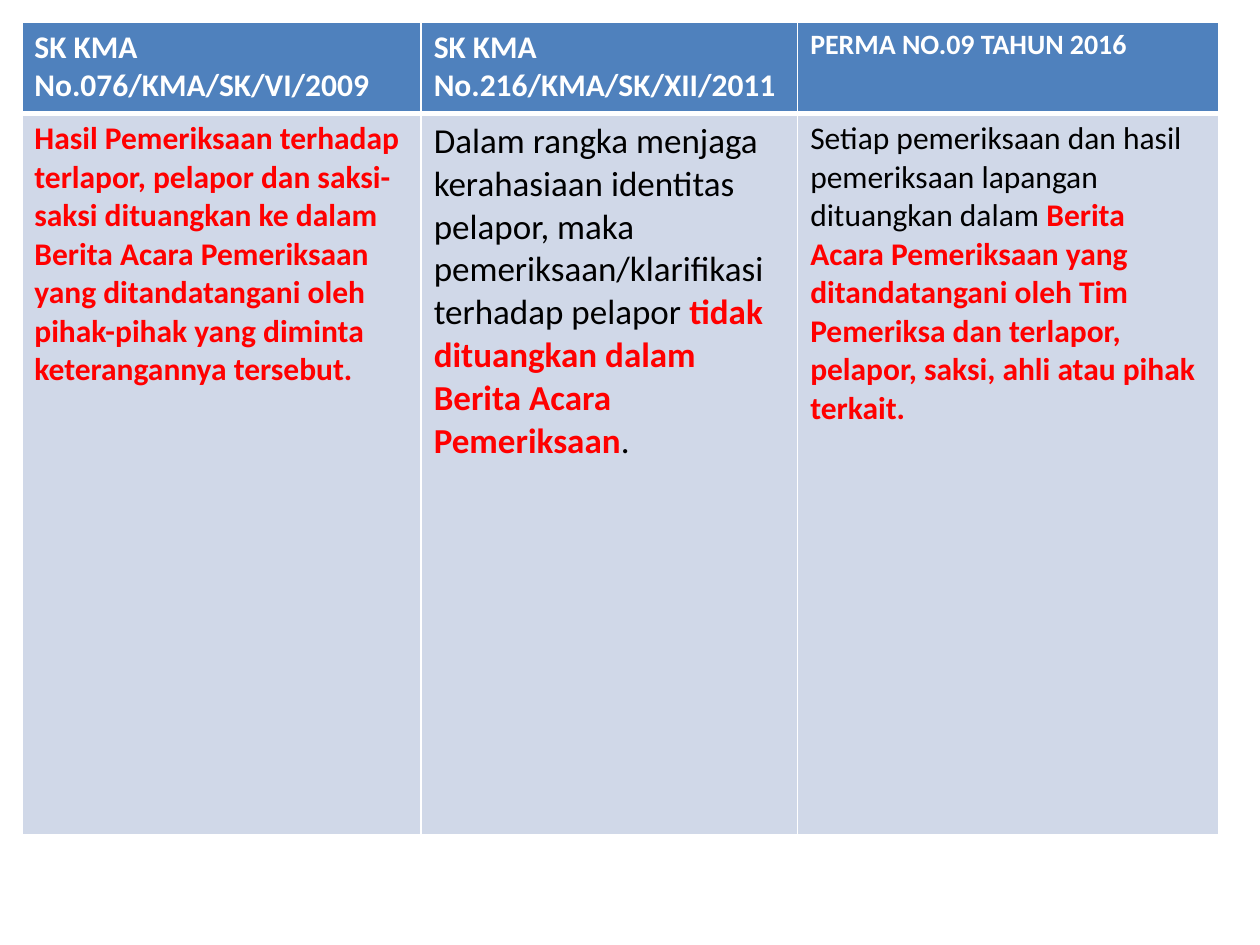
from dataclasses import dataclass

from lxml import etree
from pptx import Presentation
from pptx.dml.color import RGBColor as Rgb
from pptx.oxml import ns
from pptx.util import Cm, Pt


@dataclass(frozen=True)
class Theme:
    font: str = "Calibri"
    head: str = "4F81BD"
    body: str = "D0D8E8"
    white: str = "FFFFFF"
    black: str = "000000"
    red: str = "FF0000"
    small: int = 16
    mid: int = 18
    large: int = 20
    thin: int = 1
    thick: int = 3


theme = Theme()


def rule(cell, side, width):
    """Draw a white border on one side (L, R, T or B) of a cell."""
    props = cell._tc.get_or_add_tcPr()
    line = etree.SubElement(props, ns.qn(f"a:ln{side}"), w=str(Pt(width)))
    fill = etree.SubElement(line, ns.qn("a:solidFill"))
    etree.SubElement(fill, ns.qn("a:srgbClr"), val=theme.white)


def write(cell, size, parts):
    """Fill a cell with one paragraph of (wording, colour, bold) runs."""
    para = cell.text_frame.paragraphs[0]
    para.font.name = theme.font
    para.font.size = Pt(size)
    for words, color, bold in parts:
        run = para.add_run()
        run.text = words
        run.font.size = Pt(size)
        run.font.bold = bold
        run.font.color.rgb = Rgb.from_string(color)


heads = [
    (theme.mid, [("SK KMA No.076/KMA/SK/VI/2009", theme.white, True)]),
    (theme.mid, [("SK KMA No.216/KMA/SK/XII/2011", theme.white, True)]),
    (theme.small, [("PERMA NO.09 TAHUN 2016", theme.white, True)]),
]
bodies = [
    (theme.mid, [
        ("Hasil Pemeriksaan terhadap terlapor, pelapor dan saksi-saksi "
         "dituangkan ke dalam Berita Acara Pemeriksaan yang ditandatangani "
         "oleh pihak-pihak yang diminta keterangannya tersebut.",
         theme.red, True),
    ]),
    (theme.large, [
        ("Dalam rangka menjaga kerahasiaan identitas pelapor, maka "
         "pemeriksaan/klarifikasi terhadap pelapor ", theme.black, False),
        ("tidak dituangkan dalam Berita Acara Pemeriksaan", theme.red, True),
        (".", theme.black, False),
    ]),
    (theme.mid, [
        ("Setiap pemeriksaan dan hasil pemeriksaan lapangan dituangkan "
         "dalam ", theme.black, False),
        ("Berita Acara Pemeriksaan yang ditandatangani oleh Tim Pemeriksa "
         "dan terlapor, pelapor, saksi, ahli atau pihak terkait.",
         theme.red, True),
    ]),
]
rows = [
    (1.85, theme.head, theme.thin, theme.thick, heads),
    (14.53, theme.body, theme.thick, theme.thin, bodies),
]
widths = [8.05, 7.59, 8.48]

deck = Presentation()
deck.slide_width, deck.slide_height = Cm(25.4), Cm(19.05)
slide = deck.slides.add_slide(deck.slide_layouts[6])

table = slide.shapes.add_table(
    len(rows), len(widths), Cm(0.44), Cm(0.44),
    Cm(sum(widths)), Cm(sum(row[0] for row in rows))).table
for col, width in zip(table.columns, widths):
    col.width = Cm(width)

for r, (height, fill, top, base, cells) in enumerate(rows):
    table.rows[r].height = Cm(height)
    for c, (size, parts) in enumerate(cells):
        cell = table.cell(r, c)
        for side, width in zip("LRTB", (theme.thin, theme.thin, top, base)):
            rule(cell, side, width)
        cell.fill.solid()
        cell.fill.fore_color.rgb = Rgb.from_string(fill)
        write(cell, size, parts)

deck.save("out.pptx")
